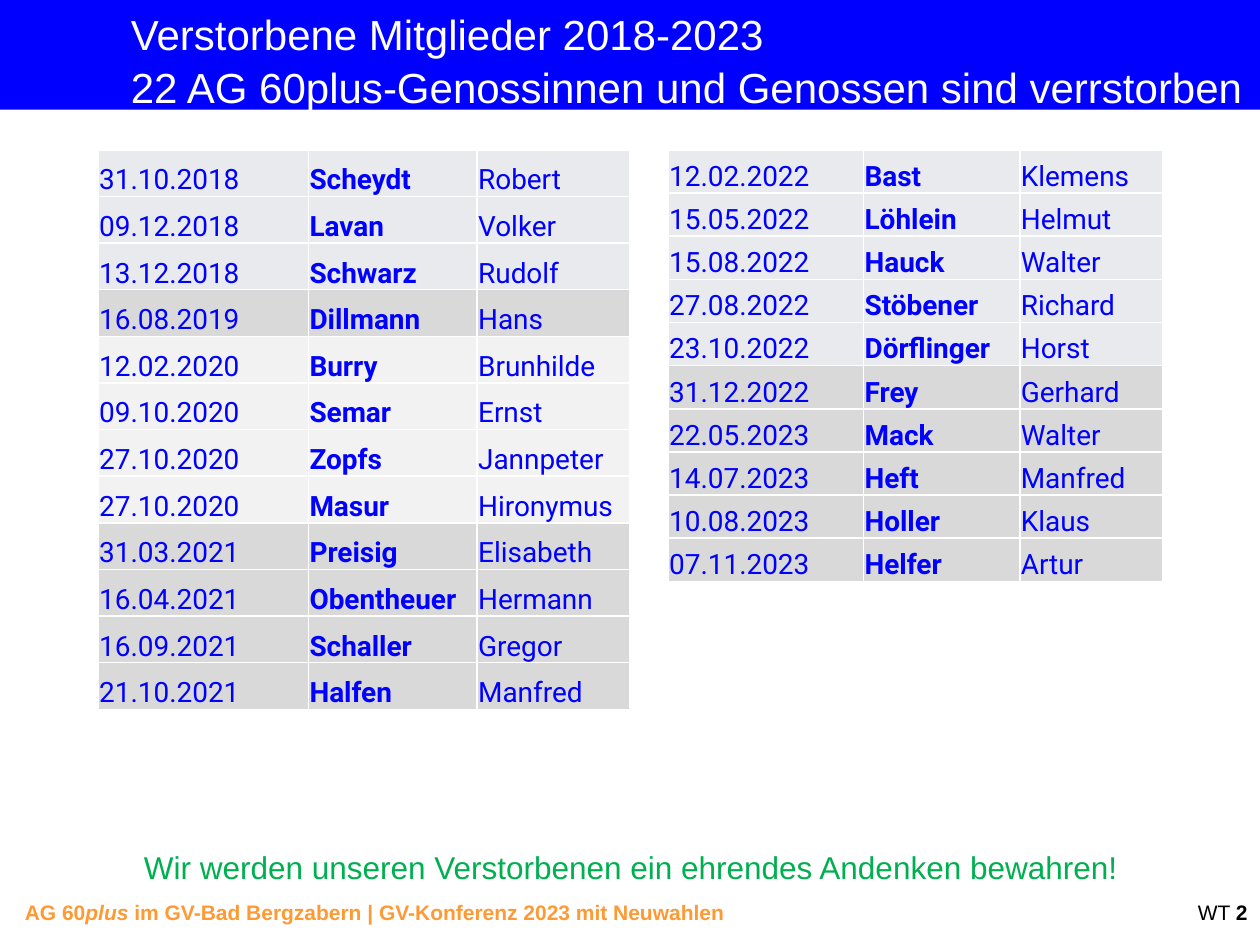
from pptx import Presentation
from pptx.dml.color import RGBColor
from pptx.enum.shapes import MSO_SHAPE
from pptx.enum.text import MSO_ANCHOR, PP_ALIGN
from pptx.oxml import parse_xml
from pptx.oxml.ns import nsdecls
from pptx.util import Cm, Pt

COLORS = {
    "blue": "0000FF", "white": "FFFFFF", "black": "000000",
    "orange": "FF9933", "green": "00B050",
    "mist": "E8EAED", "grey": "D9D9D9", "pale": "F2F2F2",
}

# Row groups: fill colour and its members
LEFT = [
    ("mist", ["31.10.2018 Scheydt Robert", "09.12.2018 Lavan Volker",
              "13.12.2018 Schwarz Rudolf"]),
    ("grey", ["16.08.2019 Dillmann Hans"]),
    ("pale", ["12.02.2020 Burry Brunhilde", "09.10.2020 Semar Ernst",
              "27.10.2020 Zopfs Jannpeter", "27.10.2020 Masur Hironymus"]),
    ("grey", ["31.03.2021 Preisig Elisabeth", "16.04.2021 Obentheuer Hermann",
              "16.09.2021 Schaller Gregor", "21.10.2021 Halfen Manfred"]),
]
RIGHT = [
    ("mist", ["12.02.2022 Bast Klemens", "15.05.2022 Löhlein Helmut",
              "15.08.2022 Hauck Walter", "27.08.2022 Stöbener Richard",
              "23.10.2022 Dörflinger Horst"]),
    ("grey", ["31.12.2022 Frey Gerhard", "22.05.2023 Mack Walter",
              "14.07.2023 Heft Manfred", "10.08.2023 Holler Klaus",
              "07.11.2023 Helfer Artur"]),
]


def rgb(name):
    return RGBColor.from_string(COLORS[name])


class Deck:
    def __init__(self, slide):
        self.slide = slide
        self.face = "Arial"
        self.cell_face = "Roboto"

    def style(self, run, size, color, bold=False, italic=False, face=None):
        font = run.font
        font.name = face or self.face
        font.size = Pt(size)
        font.bold, font.italic = bold, italic
        font.color.rgb = rgb(color)

    def bar(self, x, y, w, h, color):
        shape = self.slide.shapes.add_shape(
            MSO_SHAPE.RECTANGLE, Cm(x), Cm(y), Cm(w), Cm(h))
        shape.shadow.inherit = False
        shape.fill.solid()
        shape.fill.fore_color.rgb = rgb(color)
        shape.line.fill.background()

    def text(self, x, y, w, h, parts, size, color,
             align=PP_ALIGN.LEFT, space=1.0, wrap=True, inset=True):
        """Each part is a text followed by its marks: b bold, i italic."""
        box = self.slide.shapes.add_textbox(Cm(x), Cm(y), Cm(w), Cm(h))
        frame = box.text_frame
        frame.word_wrap = wrap
        if not inset:
            frame.margin_left = frame.margin_right = 0
            frame.margin_top = frame.margin_bottom = 0
        para = frame.paragraphs[0]
        para.alignment = align
        para.line_spacing = space
        if len(parts) == 1:
            para.text = parts[0][0]
        else:
            for words, _ in parts:
                para.add_run().text = words
        for run in para.runs:
            marks = next(m for words, m in parts if run.text in words)
            self.style(run, size, color, "b" in marks, "i" in marks)

    def border(self, cell):
        props = cell._tc.get_or_add_tcPr()
        for spot, side in enumerate("LRTB"):
            props.insert(spot, parse_xml(
                f'<a:ln{side} {nsdecls("a")} w="12700"><a:solidFill>'
                f'<a:srgbClr val="{COLORS["white"]}"/></a:solidFill></a:ln{side}>'))

    def table(self, x, y, widths, height, groups):
        rows = [(color, line.split()) for color, lines in groups for line in lines]
        table = self.slide.shapes.add_table(
            len(rows), len(widths), Cm(x), Cm(y),
            Cm(sum(widths)), Cm(height * len(rows))).table
        table.first_row = table.horz_banding = False
        for col, width in zip(table.columns, widths):
            col.width = Cm(width)
        for row, (color, words) in zip(table.rows, rows):
            row.height = Cm(height)
            for col, (cell, word) in enumerate(zip(row.cells, words)):
                cell.margin_left = cell.margin_right = cell.margin_top = Cm(0.02)
                cell.margin_bottom = 0
                cell.vertical_anchor = MSO_ANCHOR.BOTTOM
                cell.fill.solid()
                cell.fill.fore_color.rgb = rgb(color)
                self.border(cell)
                cell.text_frame.text = word
                self.style(cell.text_frame.paragraphs[0].runs[0], 16, "blue",
                           bold=col == 1, face=self.cell_face)


def main():
    prs = Presentation()
    prs.slide_width, prs.slide_height = Cm(25.4), Cm(19.05)
    deck = Deck(prs.slides.add_slide(prs.slide_layouts[6]))

    # Title band and footer
    deck.bar(-0.03, 0, 25.43, 2.21, "blue")
    deck.text(0.25, 18.01, 19.69, 0.76,
              [("AG 60", "b"), ("plus", "bi"),
               (" im GV-Bad Bergzabern | GV-Konferenz 2023 mit Neuwahlen", "b")],
              12, "orange")
    deck.text(19.63, 18.06, 5.77, 0.71, [("WT ", ""), ("2", "b")],
              12, "black", PP_ALIGN.RIGHT, 0.9)

    # Title
    deck.text(2.64, 0.13, 23.16, 2.06,
              [("Verstorbene Mitglieder 2018-2023\v"
                "22 AG 60plus-Genossinnen und Genossen sind verrstorben", "")],
              24, "white", space=1.05, wrap=False, inset=False)

    # Members
    deck.table(1.98, 3.02, [4.24, 3.4, 3.07], 0.94, LEFT)
    deck.table(13.47, 3.02, [3.94, 3.15, 2.87], 0.87, RIGHT)

    # Closing words
    deck.text(-0.86, 16.59, 27.15, 1.27,
              [("Wir werden unseren Verstorbenen ein ehrendes Andenken bewahren!", "")],
              18, "green", PP_ALIGN.CENTER, 1.5)

    prs.save("out.pptx")


if __name__ == "__main__":
    main()
